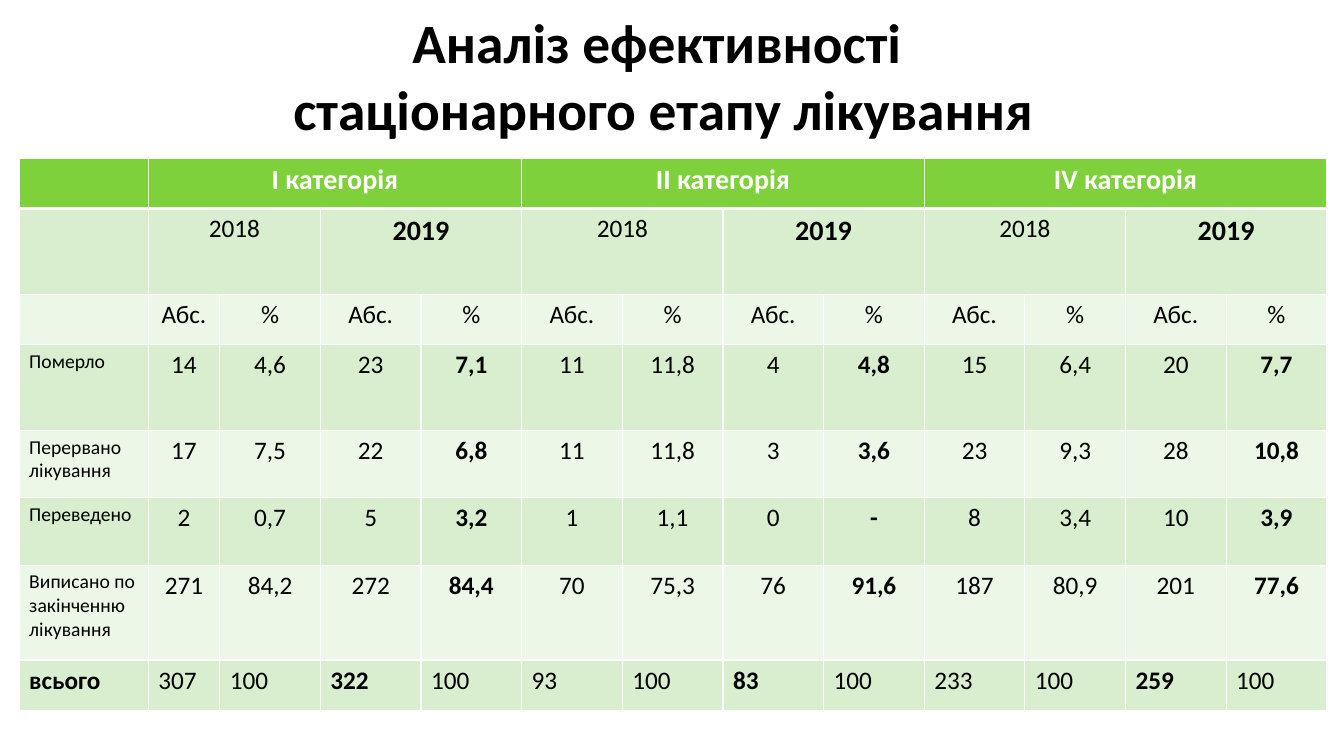
from dataclasses import dataclass

from lxml.etree import SubElement
from pptx import Presentation
from pptx.dml.color import RGBColor as RGB
from pptx.enum.text import MSO_ANCHOR as Anchor
from pptx.enum.text import MSO_AUTO_SIZE as AutoSize
from pptx.enum.text import PP_ALIGN as Align
from pptx.oxml.ns import qn
from pptx.util import Pt


@dataclass(frozen=True)
class Theme:
    font: str = "Calibri"
    ink: str = "000000"
    paper: str = "FFFFFF"
    header: str = "7FD13B"
    bands: tuple = ("ECF7E8", "D8EECE")
    title: float = 39.6
    heading: float = 20
    body: float = 18
    label: float = 14
    rule: float = 1
    header_rule: float = 3


CATEGORIES = ["І категорія", "ІІ категорія", "ІV категорія"]
YEARS = ["2018", "2019"]
MEASURES = ["Абс.", "%"]
OUTCOMES = [
    ["Померло", "14", "4,6", "23", "7,1", "11", "11,8", "4", "4,8", "15", "6,4", "20", "7,7"],
    ["Перервано лікування", "17", "7,5", "22", "6,8", "11", "11,8", "3", "3,6", "23", "9,3", "28", "10,8"],
    ["Переведено", "2", "0,7", "5", "3,2", "1", "1,1", "0", "-", "8", "3,4", "10", "3,9"],
    ["Виписано по закінченню лікування", "271", "84,2", "272", "84,4", "70", "75,3", "76", "91,6",
     "187", "80,9", "201", "77,6"],
]
TOTALS = ["всього", "307", "100", "322", "100", "93", "100", "83", "100", "233", "100", "259", "100"]
COLUMN_WIDTHS = [92.2, 51.1] + [71.9] * 11
ROW_HEIGHTS = [36, 61.2, 36, 61.2, 48.2, 48.2, 67.7, 36]


class SlideBuilder:
    def __init__(self, slide, theme):
        self.slide = slide
        self.theme = theme

    def label(self, frame, text, size, color, bold=False, align=Align.CENTER):
        frame.text = text
        for paragraph in frame.paragraphs:
            paragraph.alignment = align
            for run in paragraph.runs:
                run.font.name = self.theme.font
                run.font.size = Pt(size)
                run.font.bold = bold
                run.font.color.rgb = RGB.from_string(color)

    def title(self, text, left, top, width, height):
        heading = self.slide.shapes.title
        heading.left, heading.top, heading.width, heading.height = map(Pt, (left, top, width, height))
        self.label(heading.text_frame, text, self.theme.title, self.theme.ink, bold=True)
        heading.text_frame.vertical_anchor = Anchor.MIDDLE
        heading.text_frame.auto_size = AutoSize.NONE

    def border(self, cell, side, weight):
        line = SubElement(cell._tc.get_or_add_tcPr(), qn(f"a:ln{side}"), w=str(Pt(weight)))
        SubElement(SubElement(line, qn("a:solidFill")), qn("a:srgbClr"), val=self.theme.paper)

    def table(self, left, top, widths, heights):
        grid = self.slide.shapes.add_table(
            len(heights), len(widths), Pt(left), Pt(top), Pt(sum(widths)), Pt(sum(heights))).table
        for column, width in zip(grid.columns, widths):
            column.width = Pt(width)
        for index, (row, height) in enumerate(zip(grid.rows, heights)):
            row.height = Pt(height)
            fill = self.theme.bands[index % 2] if index else self.theme.header
            for cell in row.cells:
                for side in "LRTB":
                    under_header = (index, side) in ((0, "B"), (1, "T"))
                    self.border(cell, side, self.theme.header_rule if under_header else self.theme.rule)
                cell.fill.solid()
                cell.fill.fore_color.rgb = RGB.from_string(fill)
        return grid

    def span(self, grid, row, column, count, text, size, color, bold):
        cell = grid.cell(row, column)
        cell.merge(grid.cell(row, column + count - 1))
        self.label(cell.text_frame, text, size, color, bold)

    def column_headings(self, grid):
        theme = self.theme
        for index, category in enumerate(CATEGORIES):
            self.span(grid, 0, 1 + index * 4, 4, category, theme.heading, theme.paper, True)
        for index, year in enumerate(YEARS * len(CATEGORIES)):
            current = year == YEARS[-1]
            size = theme.heading if current else theme.body
            self.span(grid, 1, 1 + index * 2, 2, year, size, theme.ink, current)
        for column, measure in enumerate(MEASURES * len(YEARS) * len(CATEGORIES), 1):
            self.label(grid.cell(2, column).text_frame, measure, theme.body, theme.ink)

    def outcomes(self, grid):
        theme = self.theme
        for row, (outcome, *values) in enumerate(OUTCOMES, 3):
            self.label(grid.cell(row, 0).text_frame, outcome, theme.label, theme.ink, align=Align.LEFT)
            for column, value in enumerate(values, 1):
                self.label(grid.cell(row, column).text_frame, value, theme.body, theme.ink,
                           bold=column % 4 == 0)

    def totals(self, grid):
        for column, total in enumerate(TOTALS):
            self.label(grid.cell(len(ROW_HEIGHTS) - 1, column).text_frame, total, self.theme.body,
                       self.theme.ink, bold=column == 0 or column % 4 == 3, align=Align.LEFT)


def main():
    deck = Presentation()
    deck.slide_width, deck.slide_height = Pt(960), Pt(540)
    builder = SlideBuilder(deck.slides.add_slide(deck.slide_layouts[5]), Theme())
    builder.title("Аналіз ефективності \vстаціонарного етапу лікування", 41.8, 8.6, 864, 90)
    grid = builder.table(13.7, 113, COLUMN_WIDTHS, ROW_HEIGHTS)
    builder.column_headings(grid)
    builder.outcomes(grid)
    builder.totals(grid)
    deck.save("out.pptx")


if __name__ == "__main__":
    main()
